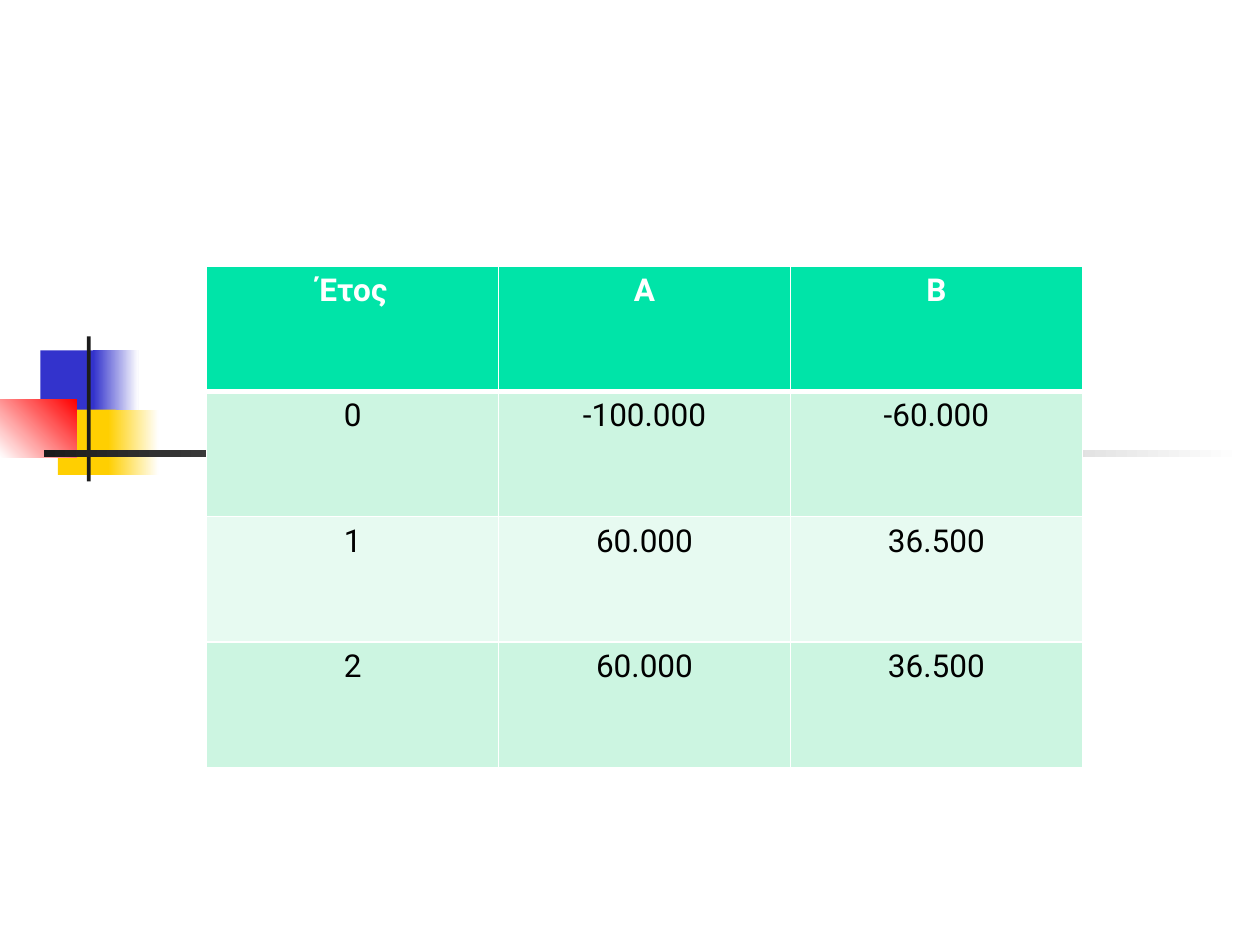
from lxml import etree
from pptx import Presentation
from pptx import util as u
from pptx.dml.color import RGBColor
from pptx.enum import shapes, text
from pptx.oxml import ns

COLORS = {
    "white": "FFFFFF", "black": "000000", "ink": "1C1C1C",
    "blue": "3333CC", "yellow": "FFCF01", "red": "FF0000",
    "header": "00E4A8", "odd": "CCF5E1", "even": "E7FAF1",
}
FONT = "Roboto"
ORNAMENTS = [
    ((0.32, 2.78, 0.48, 0.52), ["blue"], 0),
    ((0.74, 2.78, 0.36, 0.52), ["blue", "white"], 0),
    ((0.46, 3.25, 0.46, 0.52), ["yellow"], 0),
    ((0.86, 3.25, 0.40, 0.52), ["yellow", "white"], 0),
    ((0, 3.17, 0.61, 0.46), ["white", "red"], 45),
    ((0.69, 2.67, 0.03, 1.15), ["ink"], 0),
    ((0.35, 3.57, 9.51, 0.06), ["ink", "white"], 0),
]
CASH_FLOWS = [
    ("Έτος", "Α", "Β"),
    ("0", "-100.000", "-60.000"),
    ("1", "60.000", "36.500"),
    ("2", "60.000", "36.500"),
]
TABLE_BOX = (1.64, 2.11, 6.95, 3.98)


def color(name):
    return RGBColor.from_string(COLORS[name])


def inches(box):
    return [u.Inches(value) for value in box]


def add_ornament(slide, box, fills, angle):
    shape = slide.shapes.add_shape(shapes.MSO_SHAPE.RECTANGLE, *inches(box))
    shape.shadow.inherit = False
    shape.line.fill.background()
    if len(fills) == 1:
        shape.fill.solid()
        shape.fill.fore_color.rgb = color(fills[0])
        return
    shape.fill.gradient()
    shape.fill.gradient_angle = angle
    for stop, name in zip(shape.fill.gradient_stops, fills):
        stop.color.rgb = color(name)


def set_borders(cell, widths):
    properties = cell._tc.get_or_add_tcPr()
    for index, (side, width) in enumerate(widths.items()):
        line = etree.Element(ns.qn(f"a:ln{side}"), w=str(u.Pt(width)))
        fill = etree.SubElement(line, ns.qn("a:solidFill"))
        etree.SubElement(fill, ns.qn("a:srgbClr"), val=COLORS["white"])
        properties.insert(index, line)


def format_cell(cell, content, row):
    is_header = row == 0
    cell.fill.solid()
    cell.fill.fore_color.rgb = color("header" if is_header else "odd" if row % 2 else "even")
    set_borders(cell, {"L": 1, "R": 1, "T": 3 if row == 1 else 1, "B": 3 if is_header else 1})
    cell.text_frame.text = content
    paragraph = cell.text_frame.paragraphs[0]
    paragraph.alignment = text.PP_ALIGN.CENTER
    font = paragraph.runs[0].font
    font.name, font.size, font.bold = FONT, u.Pt(18), is_header
    font.color.rgb = color("white" if is_header else "black")


def add_cash_flow_table(slide):
    frame = slide.shapes.add_table(len(CASH_FLOWS), len(CASH_FLOWS[0]), *inches(TABLE_BOX))
    for row, contents in enumerate(CASH_FLOWS):
        for column, content in enumerate(contents):
            format_cell(frame.table.cell(row, column), content, row)


def main():
    presentation = Presentation()
    presentation.slide_width, presentation.slide_height = u.Inches(10), u.Inches(7.5)
    slide = presentation.slides.add_slide(presentation.slide_layouts[6])
    for ornament in ORNAMENTS:
        add_ornament(slide, *ornament)
    add_cash_flow_table(slide)
    presentation.save("out.pptx")


if __name__ == "__main__":
    main()
